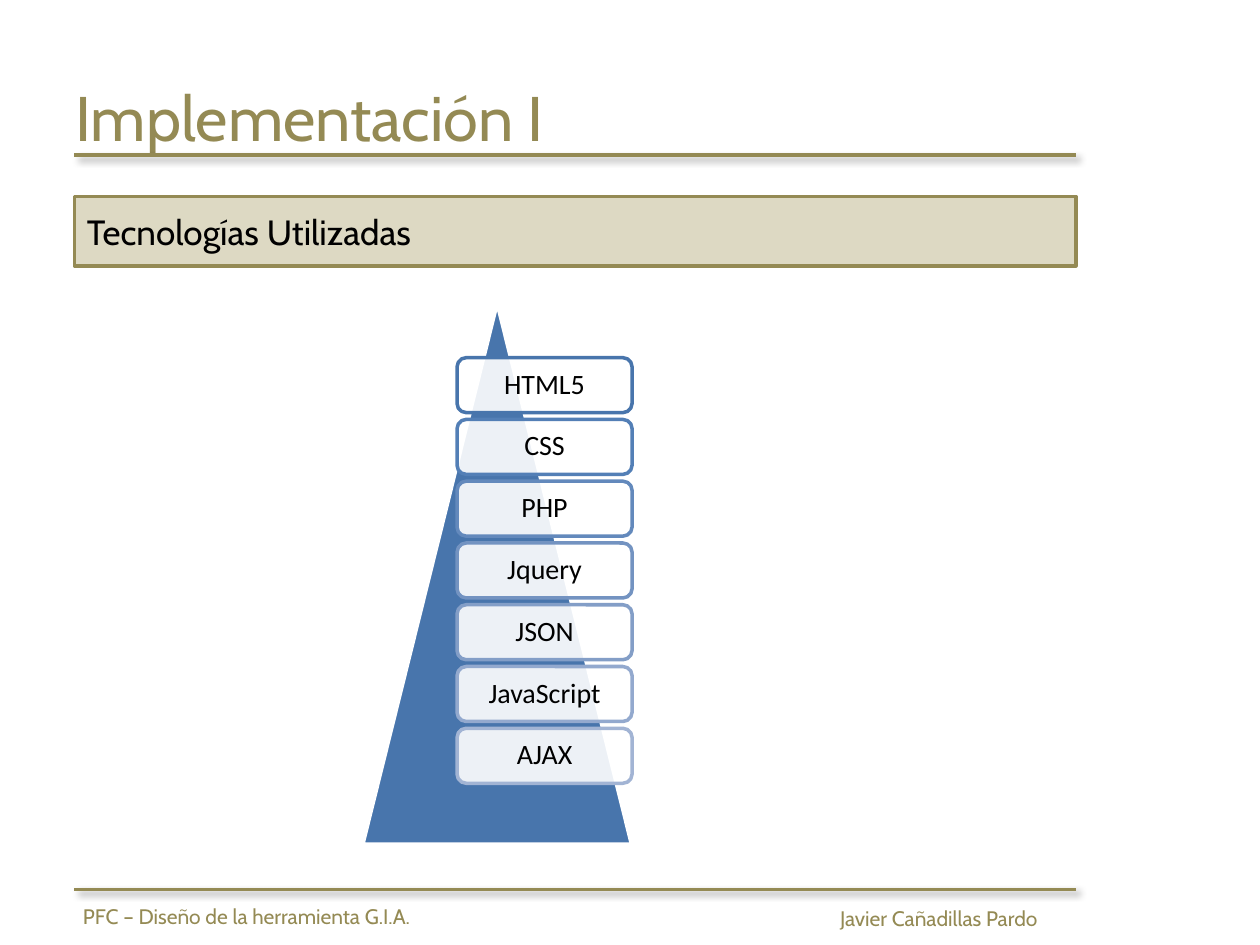
from lxml import etree
from pptx import Presentation
from pptx.dml.color import RGBColor
from pptx.enum import shapes, text
from pptx.oxml import ns
from pptx.util import Pt

OLIVE = RGBColor(0x94, 0x8A, 0x54)
SAND = RGBColor(0xDD, 0xD9, 0xC3)
BLUE = RGBColor(0x48, 0x75, 0xAC)
WHITE = RGBColor(0xFF, 0xFF, 0xFF)
BLACK = RGBColor(0, 0, 0)
TECHNOLOGIES = [
    ("HTML5", BLUE),
    ("CSS", RGBColor(0x53, 0x7F, 0xB6)),
    ("PHP", RGBColor(0x63, 0x89, 0xBC)),
    ("Jquery", RGBColor(0x73, 0x93, 0xC1)),
    ("JSON", RGBColor(0x83, 0x9E, 0xC7)),
    ("JavaScript", RGBColor(0x93, 0xA9, 0xCE)),
    ("AJAX", RGBColor(0xA2, 0xB4, 0xD4)),
]
SHADOW = (
    f'<a:effectLst {ns.nsdecls("a")}>'
    '<a:outerShdw blurRad="50800" dist="38100" dir="2700000" algn="tl" rotWithShape="0">'
    '<a:srgbClr val="000000"><a:alpha val="40000"/></a:srgbClr>'
    '</a:outerShdw></a:effectLst>'
)

prs = Presentation()
prs.slide_width, prs.slide_height = Pt(720), Pt(540)
s = prs.slides.add_slide(prs.slide_layouts[6])


def write(sp, words, size, color, font="Cabin", align=text.PP_ALIGN.LEFT,
          anchor=text.MSO_ANCHOR.MIDDLE):
    tf = sp.text_frame
    tf.word_wrap = True
    tf.vertical_anchor = anchor
    p = tf.paragraphs[0]
    p.alignment = align
    r = p.add_run()
    r.text = words
    for name, value in {"name": font, "size": Pt(size)}.items():
        setattr(r.font, name, value)
    r.font.color.rgb = color
    return tf


def add_box(kind, left, top, width, height, fill, line):
    sp = s.shapes.add_shape(kind, Pt(left), Pt(top), Pt(width), Pt(height))
    sp.shadow.inherit = False
    sp.fill.solid()
    sp.fill.fore_color.rgb = fill
    sp.line.color.rgb = line
    sp.line.width = Pt(2)
    return sp


# Title and the rules under it and above the footer
title = s.shapes.add_textbox(Pt(36), Pt(21.6), Pt(648), Pt(90))
write(title, "Implementación I", 36, OLIVE)
for y in (88.6, 508.3):
    rule = s.shapes.add_connector(shapes.MSO_CONNECTOR.STRAIGHT,
                                  Pt(42.5), Pt(y), Pt(614.9), Pt(y))
    rule.line.color.rgb = OLIVE
    rule.line.width = Pt(1.75)
    rule._element.spPr.append(etree.fromstring(SHADOW))

heading = add_box(shapes.MSO_SHAPE.RECTANGLE, 42.5, 112.3, 572.4, 39.6, SAND, OLIVE)
write(heading, "Tecnologías Utilizadas", 20, BLACK)

# Pyramid with the technology list
add_box(shapes.MSO_SHAPE.ISOSCELES_TRIANGLE, 207.4, 173.5, 153.4, 308.9, BLUE, WHITE)
for i, (name, color) in enumerate(TECHNOLOGIES):
    sp = add_box(shapes.MSO_SHAPE.ROUNDED_RECTANGLE,
                 261.2, 204.4 + i * 35.3, 100, 31.4, WHITE, color)
    rgb = sp.fill._xPr.find(".//" + ns.qn("a:srgbClr"))
    etree.SubElement(rgb, ns.qn("a:alpha"), val="90000")
    tf = write(sp, name, 16, BLACK, "Calibri", text.PP_ALIGN.CENTER)
    for side in ("left", "top", "right", "bottom"):
        setattr(tf, f"margin_{side}", Pt(5))
    tf.paragraphs[0].line_spacing = 0.9

# Footer
for words, left, top, width in (
    ("Javier Cañadillas Pardo", 473, 514.1, 139.7),
    ("PFC – Diseño de la herramienta G.I.A.", 40.3, 512.6, 218.2),
):
    sp = s.shapes.add_textbox(Pt(left), Pt(top), Pt(width), Pt(21.6))
    write(sp, words, 12, OLIVE, anchor=text.MSO_ANCHOR.TOP)

prs.save("out.pptx")
